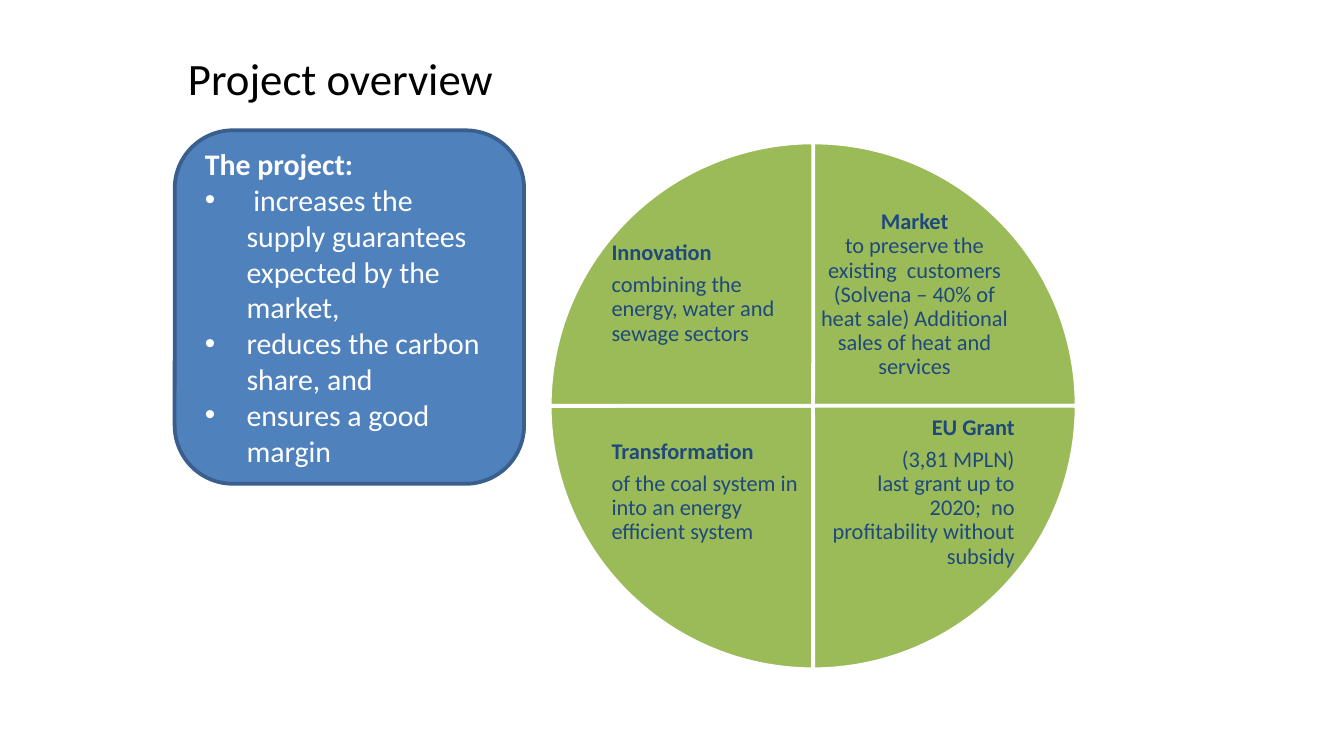
from pptx import Presentation, util as u
from pptx.dml.color import RGBColor
from pptx.enum import shapes, text
from pptx.oxml.ns import qn
from lxml import etree

FONT = "Calibri"
HUES = {"ink": "000000", "navy": "1F497D", "white": "FFFFFF",
        "blue": "4F81BD", "edge": "3A5F8C", "green": "9BBB59"}
LEFT, MID, RIGHT = text.PP_ALIGN.LEFT, text.PP_ALIGN.CENTER, text.PP_ALIGN.RIGHT


def hue(name):
    return RGBColor.from_string(HUES[name])


def mark(para, indent):
    """Give a paragraph a round bullet with a hanging indent."""
    props = para._p.get_or_add_pPr()
    props.set("marL", str(u.Inches(indent)))
    props.set("indent", str(-u.Inches(indent)))
    etree.SubElement(props, qn("a:buFont"), typeface="Arial")
    etree.SubElement(props, qn("a:buChar"), char="•")


def write(frame, paras, size, color, align=LEFT, inset=(0.1, 0.05, 0.1, 0.05),
          line=None, after=None, bullets=False):
    """Fill a frame; each paragraph is a list of (text, bold) lines."""
    frame.word_wrap = True
    frame.vertical_anchor = text.MSO_ANCHOR.MIDDLE
    (frame.margin_left, frame.margin_top,
     frame.margin_right, frame.margin_bottom) = map(u.Inches, inset)
    for i, lines in enumerate(paras):
        para = frame.add_paragraph() if i else frame.paragraphs[0]
        para.alignment = align
        if line:
            para.line_spacing = line
        if after:
            para.space_after = u.Pt(after)
        if bullets and i:
            mark(para, 0.31)
        for j, (words, bold) in enumerate(lines):
            if j:
                para.add_line_break()
            run = para.add_run()
            run.text = words
            run.font.name, run.font.size = FONT, u.Pt(size)
            run.font.bold, run.font.color.rgb = bold, hue(color)


def draw(slide, kind, box, fill, edge):
    shape = slide.shapes.add_shape(kind, *map(u.Inches, box))
    shape.shadow.inherit = False
    shape.fill.solid()
    shape.fill.fore_color.rgb = hue(fill)
    shape.line.color.rgb = hue(edge)
    shape.line.width = u.Pt(2)
    return shape


def label(slide, box, paras, size, color, **style):
    frame = slide.shapes.add_textbox(*map(u.Inches, box)).text_frame
    write(frame, paras, size, color, **style)


def wheel(slide, box, parts):
    """Draw four quarter slices clockwise from the top, each with its label."""
    left, top, width, height = box
    for i, (across, down, align, low, paras) in enumerate(parts):
        pie = draw(slide, shapes.MSO_SHAPE.PIE, box, "green", "white")
        # 54 adjustment units make a quarter turn
        pie.adjustments[0] = (i + 3) % 4 * 54
        pie.adjustments[1] = i * 54
        label(slide, (left + across, top + down, 1.45, 1.17), paras, 12, "navy",
              align=align, inset=(0.02, 0.02, 0.02, low), line=0.9, after=4.2)


def card(slide, box, paras):
    shape = draw(slide, shapes.MSO_SHAPE.ROUNDED_RECTANGLE, box, "blue", "edge")
    write(shape.text_frame, paras, 16, "white", bullets=True)


def main():
    deck = Presentation()
    deck.slide_width = u.Inches(10)
    deck.slide_height = deck.slide_width * 9 // 16
    slide = deck.slides.add_slide(deck.slide_layouts[6])
    wheel(slide, (4.09, 1.06, 3.92, 3.92), [
        (1.99, 0.73, MID, 0.38, [[
            ("Market", True),
            ("to preserve the existing  customers (Solvena – 40% of heat sale) "
             "Additional sales of heat and services", False)]]),
        (2.03, 2.02, RIGHT, 0.02, [
            [("EU Grant", True)],
            [("(3,81 MPLN)", False),
             ("last grant up to 2020;  no profitability without subsidy", False)]]),
        (0.44, 2.02, LEFT, 0.02, [
            [("Transformation", True)],
            [("of the coal system in into an energy efficient system", False)]]),
        (0.44, 0.72, LEFT, 0.38, [
            [("Innovation", True)],
            [("combining the energy, water and sewage sectors", False)]]),
    ])
    label(slide, (1.3, 0.23, 8.2, 1.09), [[("Project overview", False)]],
          24, "ink", inset=(0.1, 0.05, 0.1, 0.45))
    card(slide, (1.3, 0.97, 2.6, 2.63), [
        [("The project:", True)],
        [(" increases the supply guarantees expected by the market,", False)],
        [("reduces the carbon share, and", False)],
        [("ensures a good margin", False)],
    ])
    deck.save("out.pptx")


if __name__ == "__main__":
    main()
